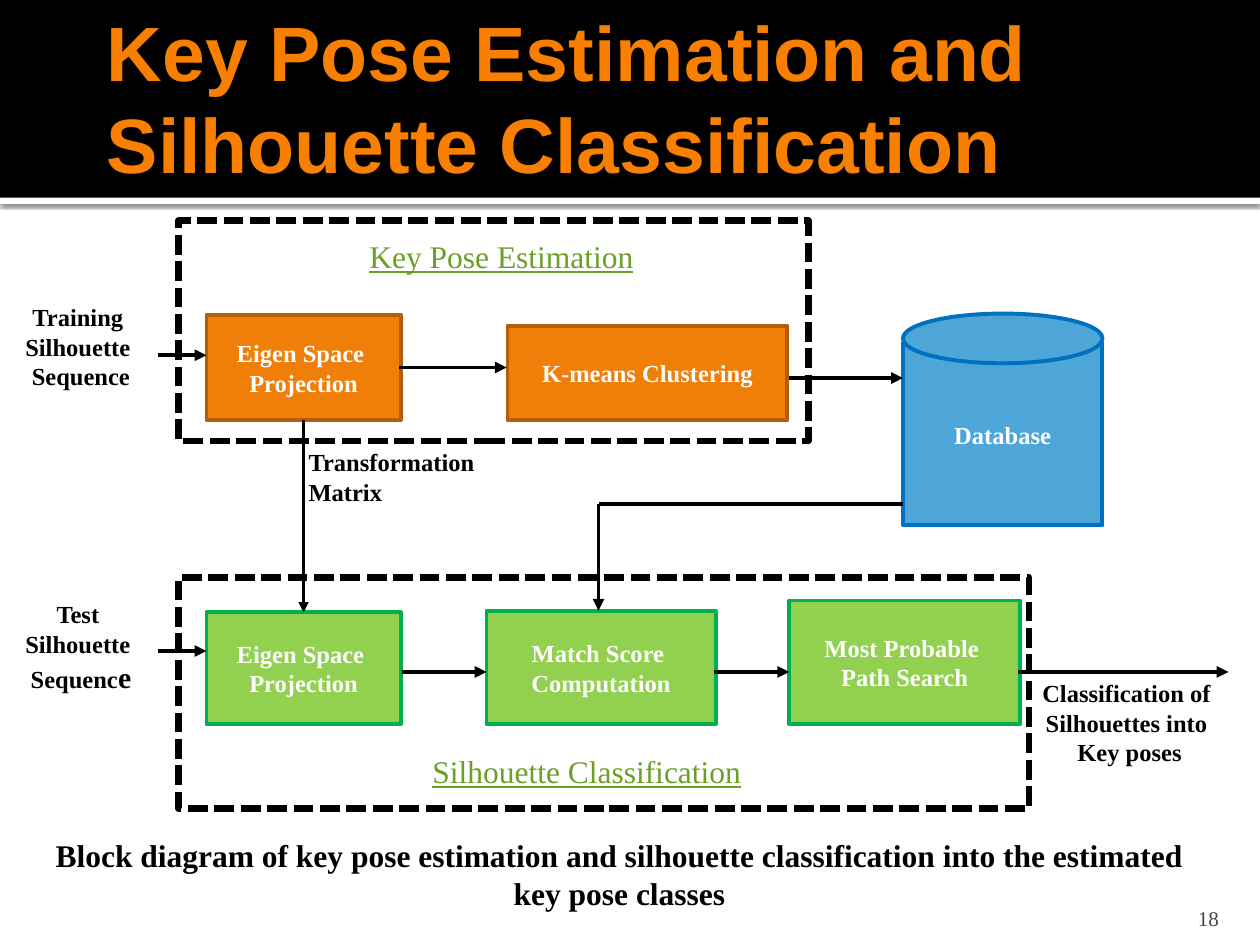
from lxml import etree
from pptx import Presentation
from pptx.dml.color import RGBColor
from pptx.enum.dml import MSO_LINE
from pptx.enum.shapes import MSO_CONNECTOR, MSO_SHAPE
from pptx.enum.text import MSO_ANCHOR, MSO_AUTO_SIZE, PP_ALIGN
from pptx.oxml.ns import qn
from pptx.util import Pt

RECT, OVAL = MSO_SHAPE.RECTANGLE, MSO_SHAPE.OVAL
STRAIGHT = MSO_CONNECTOR.STRAIGHT
DASH = MSO_LINE.SQUARE_DOT
TOP, MIDDLE, BOTTOM = MSO_ANCHOR.TOP, MSO_ANCHOR.MIDDLE, MSO_ANCHOR.BOTTOM
LEFT, CENTER, RIGHT = PP_ALIGN.LEFT, PP_ALIGN.CENTER, PP_ALIGN.RIGHT
FIT, NO_FIT = MSO_AUTO_SIZE.SHAPE_TO_FIT_TEXT, MSO_AUTO_SIZE.NONE

SERIF, SANS = "Times New Roman", "Arial"
COLORS = {
    "black": "000000", "white": "FFFFFF", "title": "F97F00", "number": "454545",
    "orange": "F07F09", "orange_edge": "B45F07",
    "green": "92D050", "green_edge": "00B050",
    "blue": "4EA5D8", "blue_edge": "0070C0", "heading": "6B9F25",
}


def rgb(name):
    return RGBColor.from_string(COLORS[name])


def write(frame, lines, size=14, color="black", font=SERIF, bold=True,
          underline=None, align=CENTER, anchor=TOP, wrap=False):
    frame.word_wrap = wrap
    frame.vertical_anchor = anchor
    for index, line in enumerate(lines):
        paragraph = frame.paragraphs[0] if index == 0 else frame.add_paragraph()
        paragraph.alignment = align
        runs = [(line, size)] if isinstance(line, str) else line
        for text, run_size in runs:
            run = paragraph.add_run()
            run.text = text
            run.font.name = font
            run.font.size = Pt(run_size)
            run.font.bold = bold
            run.font.underline = underline
            run.font.color.rgb = rgb(color)


def add_label(slide, bounds, lines, fit=FIT, insets=None, **style):
    frame = slide.shapes.add_textbox(*map(Pt, bounds)).text_frame
    write(frame, lines, **style)
    frame.auto_size = fit
    if insets:
        (frame.margin_left, frame.margin_top,
         frame.margin_right, frame.margin_bottom) = map(Pt, insets)


def add_block(slide, bounds, fill=None, edge=None, width=2.25, lines=(), kind=RECT):
    block = slide.shapes.add_shape(kind, *map(Pt, bounds))
    block.shadow.inherit = False
    if fill:
        block.fill.solid()
        block.fill.fore_color.rgb = rgb(fill)
    else:
        block.fill.background()
    if edge:
        block.line.color.rgb = rgb(edge)
        block.line.width = Pt(width)
    else:
        block.line.fill.background()
    if lines:
        write(block.text_frame, lines, color="white", anchor=MIDDLE)
    return block


def add_group_frame(slide, bounds):
    add_block(slide, bounds, edge="black", width=3.78).line.dash_style = DASH


def add_flow(slide, start, end, width=2.25, arrow=True):
    flow = slide.shapes.add_connector(STRAIGHT, *map(Pt, start + end))
    flow.line.color.rgb = rgb("black")
    flow.line.width = Pt(width)
    if arrow:
        etree.SubElement(flow.line._get_or_add_ln(), qn("a:tailEnd"), type="triangle")
    etree.SubElement(flow._element.spPr, qn("a:effectLst"))


def add_drop_shadow(block):
    effects = block._element.spPr.find(qn("a:effectLst"))
    shadow = etree.SubElement(
        effects, qn("a:outerShdw"), blurRad=str(Pt(2.5)), dist=str(Pt(0.8)),
        dir="5400000", algn="tl", rotWithShape="0")
    tint = etree.SubElement(shadow, qn("a:srgbClr"), val=COLORS["black"])
    etree.SubElement(tint, qn("a:alpha"), val="60000")


def add_header(slide):
    add_drop_shadow(add_block(slide, (0, 113, 720, 3.6), "white"))
    add_block(slide, (0, 0, 720, 113), "black")
    add_label(slide, (54, 5.8, 648, 98.6),
              ["Key Pose Estimation and Silhouette Classification"],
              fit=NO_FIT, insets=(7.2, 3.6, 3.6, 3.6), size=44, color="title",
              font=SANS, align=LEFT, anchor=MIDDLE, wrap=True)


def add_blocks(slide):
    projection = ["Eigen Space ", "Projection"]
    for bounds, lines in [
        ((118, 180, 111, 60), projection),
        ((290, 186.2, 160, 54), ["K-means Clustering"]),
    ]:
        add_block(slide, bounds, "orange", "orange_edge", lines=lines)

    add_block(slide, (516, 196.2, 114, 104), "blue", "blue_edge", lines=["Database"])
    add_block(slide, (516, 179.2, 114, 28.4), "blue", "blue_edge", kind=OVAL)

    for bounds, lines in [
        ((118, 350, 111, 64), projection),
        ((278, 349, 131, 65), ["Match Score ", "Computation"]),
        ((451, 343.2, 132, 70.8), ["Most Probable ", "Path Search"]),
    ]:
        add_block(slide, bounds, "green", "green_edge", lines=lines)


def add_flows(slide):
    for start, end in [
        ((90, 203), (118, 203)),
        ((228, 210), (289.5, 210)),
        ((451, 216), (516, 216)),
        ((342, 288), (342, 349)),
        ((90, 372), (118, 372)),
        ((230, 384), (278, 384)),
        ((408, 384), (451, 384)),
        ((582, 384), (702, 384)),
    ]:
        add_flow(slide, start, end)
    add_flow(slide, (342, 288), (516, 288), arrow=False)
    add_flow(slide, (173.5, 240), (173.5, 350), width=1.75)


def add_labels(slide):
    for bounds, lines in [
        ((7, 169.2, 78.5, 58.3), ["Training ", "Silhouette ", "Sequence"]),
        ((7, 339, 78.5, 62), ["Test ", "Silhouette ", [("Sequenc", 14), ("e", 17)]]),
        ((588, 384, 115, 58.3),
         ["Classification of ", "Silhouettes into ", "Key poses"]),
    ]:
        add_label(slide, bounds, lines)
    add_label(slide, (169.2, 252, 110, 41), ["Transformation", "Matrix"], align=LEFT)

    for bounds, heading in [
        ((204, 132, 167, 29), "Key Pose Estimation"),
        ((240, 426, 193, 29), "Silhouette Classification"),
    ]:
        add_label(slide, bounds, [heading], size=18, color="heading",
                  bold=False, underline=True, align=LEFT)

    add_label(slide, (24, 474, 660, 51),
              ["Block diagram of key pose estimation and silhouette classification "
               "into the estimated key pose classes"], size=18, wrap=True)
    add_label(slide, (646, 510, 57.6, 21.6), ["18"], fit=NO_FIT,
              insets=(7.2, 3.6, 7.2, 0), size=12, color="number", bold=False,
              align=RIGHT, anchor=BOTTOM, wrap=True)


def main():
    deck = Presentation()
    deck.slide_width, deck.slide_height = Pt(720), Pt(540)
    slide = deck.slides.add_slide(deck.slide_layouts[6])
    add_header(slide)
    add_blocks(slide)
    add_group_frame(slide, (102, 126, 360, 126))
    add_group_frame(slide, (102, 330, 486, 132))
    add_flows(slide)
    add_labels(slide)
    deck.save("out.pptx")


if __name__ == "__main__":
    main()
